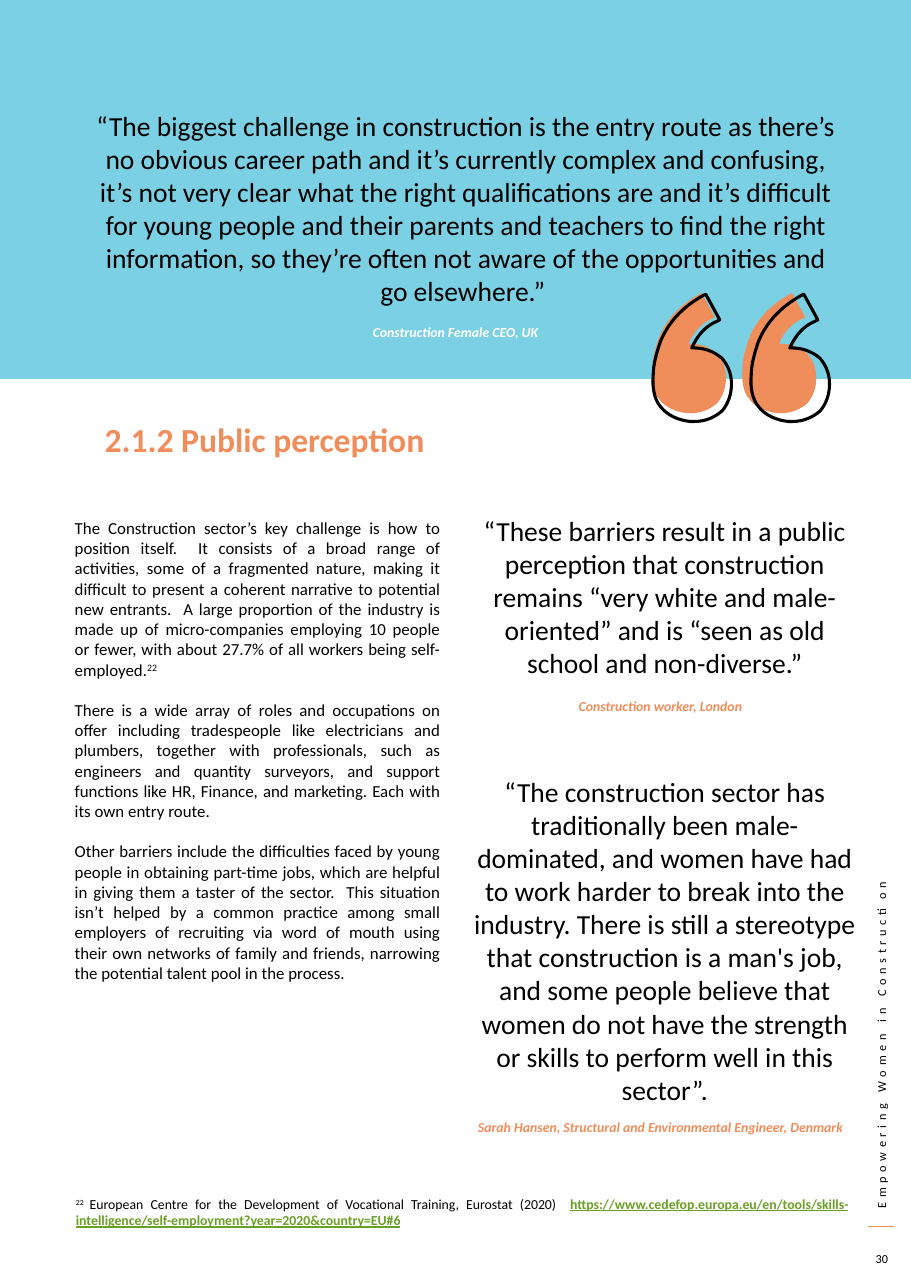
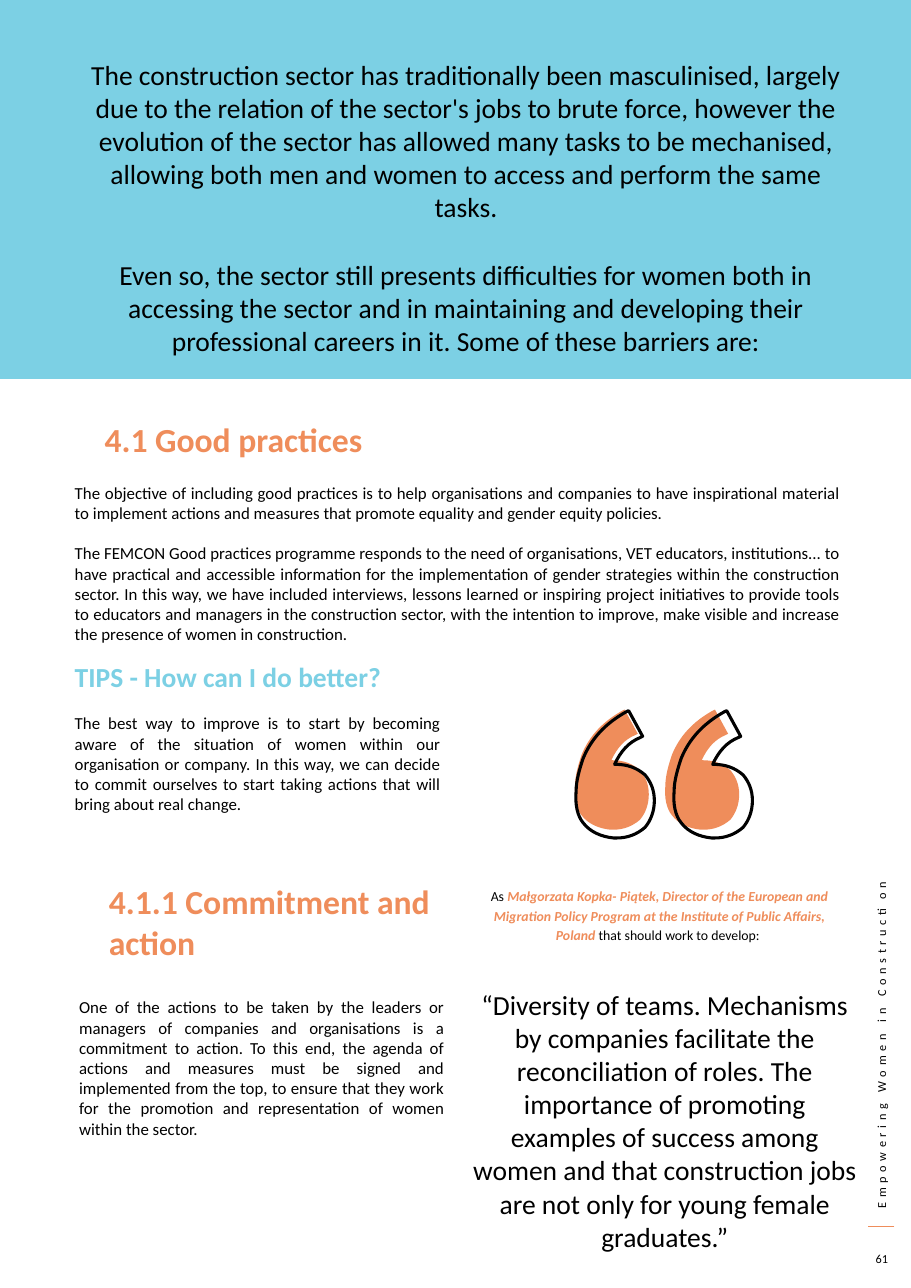
"""Build two report pages on women in construction."""
from dataclasses import dataclass

from lxml import etree
from pptx import Presentation
from pptx import util as u
from pptx.dml.color import RGBColor
from pptx.enum import shapes, text
from pptx.oxml.ns import qn
from pptx.shapes.autoshape import Shape
from pptx.slide import Slide

LEFT = text.PP_ALIGN.LEFT
CENTER = text.PP_ALIGN.CENTER
JUSTIFY = text.PP_ALIGN.JUSTIFY
TOP = text.MSO_ANCHOR.TOP
MIDDLE = text.MSO_ANCHOR.MIDDLE


@dataclass(frozen=True)
class Theme:
    """Colours in RRGGBB, type sizes and gaps in points."""
    font: str = "Calibri"
    ink: str = "000000"
    outline: str = "010101"
    white: str = "FFFFFF"
    orange: str = "EF8D5B"
    sky: str = "7CD0E4"
    link: str = "6B9F25"
    heading: float = 22
    quote: float = 18
    body: float = 11
    small: float = 9
    tiny: float = 8
    body_gap: float = 13.2
    quote_gap: float = 22.7
    column_gap: float = 0.31


T = Theme()


@dataclass(frozen=True)
class Run:
    """A stretch of text in one style."""
    text: str
    size: float = T.body
    color: str = T.ink
    bold: bool = False
    italic: bool = False
    underline: bool = False
    raised: bool = False
    tracking: float = 0


@dataclass(frozen=True)
class Para:
    """A paragraph of runs."""
    runs: tuple[Run, ...]
    align: text.PP_ALIGN = JUSTIFY
    before: float = 0
    spacing: float = 1


@dataclass(frozen=True)
class Box:
    """A text frame with its place in inches."""
    left: float
    top: float
    width: float
    height: float
    paras: tuple[Para, ...]
    anchor: text.MSO_ANCHOR = TOP
    columns: int = 1
    rotation: float = 0


@dataclass(frozen=True)
class Page:
    """A page with its title, number, boxes and quote mark corner."""
    number: int
    title: str
    mark: tuple[float, float]
    boxes: tuple[Box, ...]


def plain(*texts: str) -> tuple[Para, ...]:
    """Return justified body paragraphs."""
    return tuple(Para((Run(t),), before=T.body_gap if i else 0) for i, t in enumerate(texts))


def quote(left: float, top: float, width: float, height: float, *texts: str,
          anchor: text.MSO_ANCHOR = MIDDLE) -> Box:
    """Return a box of large centred paragraphs."""
    paras = tuple(Para((Run(t, T.quote),), CENTER, T.quote_gap if i else 0)
                  for i, t in enumerate(texts))
    return Box(left, top, width, height, paras, anchor)


def speaker(words: str, color: str = T.orange) -> Run:
    """Return the run that names a speaker."""
    return Run(words, T.small, color, bold=True, italic=True)


def credit(left: float, top: float, *runs: Run) -> Box:
    """Return the small centred box under a quote."""
    return Box(left, top, 3.57, 0.43, (Para(runs, CENTER, spacing=1.15),))


def heading(left: float, top: float, width: float, height: float, words: str) -> Box:
    """Return an orange section heading."""
    return Box(left, top, width, height,
               (Para((Run(words, T.heading, T.orange, bold=True),), LEFT),))


def fill_frame(sp: Shape, box: Box) -> None:
    """Write the paragraphs of a box into a shape."""
    tf = sp.text_frame
    tf.word_wrap = True
    tf.auto_size = text.MSO_AUTO_SIZE.NONE
    tf.vertical_anchor = box.anchor
    if box.columns > 1:
        body = tf._txBody.find(qn("a:bodyPr"))
        body.set("numCol", str(box.columns))
        body.set("spcCol", str(u.Inches(T.column_gap)))
    for i, para in enumerate(box.paras):
        p = tf.add_paragraph() if i else tf.paragraphs[0]
        p.alignment = para.align
        p.line_spacing = para.spacing
        p.space_before = u.Pt(para.before)
        for run in para.runs:
            r = p.add_run()
            r.text = run.text
            r.font.name = T.font
            r.font.size = u.Pt(run.size)
            r.font.color.rgb = RGBColor.from_string(run.color)
            r.font.bold = run.bold
            r.font.italic = run.italic
            r.font.underline = run.underline
            if run.raised:
                r._r.get_or_add_rPr().set("baseline", "30000")
            if run.tracking:
                r._r.get_or_add_rPr().set("spc", str(int(run.tracking * 100)))


def add_box(s: Slide, box: Box) -> None:
    """Add a text box."""
    sp = s.shapes.add_textbox(u.Inches(box.left), u.Inches(box.top),
                              u.Inches(box.width), u.Inches(box.height))
    sp.rotation = box.rotation
    fill_frame(sp, box)


def set_title(s: Slide, words: str) -> None:
    """Place and fill the title placeholder."""
    box = heading(0.85, 3.75, 3.57, 0.48, words)
    sp = s.shapes.title
    sp.left, sp.top = u.Inches(box.left), u.Inches(box.top)
    sp.width, sp.height = u.Inches(box.width), u.Inches(box.height)
    fill_frame(sp, box)


Point = tuple[float, float]
COMMA_START: Point = (0.35, 1.09)
COMMA: tuple[tuple[Point, ...], ...] = (
    ((0.34, 1.09), (0.33, 1.09), (0.32, 1.09)),
    ((0.22, 1.08), (0.12, 1.04), (0.06, 0.96)),
    ((0.01, 0.9), (-0.01, 0.8), (0, 0.69)),
    ((0, 0.6), (0.03, 0.5), (0.06, 0.41)),
    ((0.13, 0.24), (0.25, 0.11), (0.43, 0.01)),
    ((0.45, 0),),
    ((0.57, 0.22),),
    ((0.55, 0.23),),
    ((0.45, 0.27), (0.38, 0.35), (0.33, 0.46)),
    ((0.34, 0.46),),
    ((0.44, 0.46), (0.52, 0.49), (0.59, 0.55)),
    ((0.64, 0.61), (0.67, 0.68), (0.67, 0.77)),
    ((0.67, 0.86), (0.64, 0.94), (0.59, 1)),
    ((0.52, 1.06), (0.44, 1.09), COMMA_START),
)


def add_commas(s: Slide, left: float, top: float, pitch: float, scale: float = 1) -> Shape:
    """Add a pair of commas as one freeform with curved sides."""
    def place(point: Point, n: int) -> tuple[int, int]:
        """Return a comma point in slide units."""
        return (u.Inches(left + n * pitch + point[0] * scale), u.Inches(top + point[1] * scale))

    builder = s.shapes.build_freeform(*place(COMMA_START, 0), scale=1.0)
    for n in range(2):
        if n:
            builder.move_to(*place(COMMA_START, n))
        builder.add_line_segments([place(seg[-1], n) for seg in COMMA], close=True)
    sp = builder.convert_to_shape()
    sp.shadow.inherit = False
    segments = [(n, seg) for n in range(2) for seg in COMMA]
    for side, (n, seg) in zip(list(sp._element.iter(qn("a:lnTo"))), segments):
        if len(seg) == 3:
            curve = etree.Element(qn("a:cubicBezTo"))
            for point in seg:
                x, y = place(point, n)
                etree.SubElement(curve, qn("a:pt"), x=str(x - sp.left), y=str(y - sp.top))
            side.getparent().replace(side, curve)
    return sp


def add_quote_mark(s: Slide, left: float, top: float) -> None:
    """Add orange commas under a looser black outline."""
    solid = add_commas(s, left, top, 0.82)
    solid.fill.solid()
    solid.fill.fore_color.rgb = RGBColor.from_string(T.orange)
    solid.line.fill.background()
    outline = add_commas(s, left + 0.01, top + 0.01, 0.89, 1.06)
    outline.fill.background()
    outline.line.color.rgb = RGBColor.from_string(T.outline)
    outline.line.width = u.Pt(2)


def add_frame(s: Slide, number: int) -> None:
    """Add the band, side label, rule and page number."""
    band = s.shapes.add_shape(shapes.MSO_SHAPE.RECTANGLE, 0, 0, u.Inches(8.27), u.Inches(3.44))
    band.shadow.inherit = False
    band.fill.solid()
    band.fill.fore_color.rgb = RGBColor.from_string(T.sky)
    band.line.fill.background()
    label = Run("Empowering Women in Construction", T.tiny, tracking=3)
    add_box(s, Box(6.27, 9.21, 3.47, 0.24, (Para((label,), LEFT),), rotation=270))
    rule = s.shapes.add_connector(shapes.MSO_CONNECTOR.STRAIGHT, u.Inches(8.12),
                                  u.Inches(11.13), u.Inches(7.88), u.Inches(11.13))
    rule.line.color.rgb = RGBColor.from_string(T.orange)
    rule.line.width = u.Pt(1)
    etree.SubElement(rule._element.spPr, qn("a:effectLst"))
    add_box(s, Box(7.81, 11.28, 0.39, 0.29, (Para((Run(str(number), T.tiny),), CENTER),), MIDDLE))


SECTOR = plain(
    "The Construction sector’s key challenge is how to position itself.  It consists of a broad range of activities, some of a fragmented nature, making it difficult to present a coherent narrative to potential new entrants.  A large proportion of the industry is made up of micro-companies employing 10 people or fewer, with about 27.7% of all workers being self-employed.",
    "There is a wide array of roles and occupations on offer including tradespeople like electricians and plumbers, together with professionals, such as engineers and quantity surveyors, and support functions like HR, Finance, and marketing. Each with its own entry route.",
    "Other barriers include the difficulties faced by young people in obtaining part-time jobs, which are helpful in giving them a taster of the sector.  This situation isn’t helped by a common practice among small employers of recruiting via word of mouth using their own networks of family and friends, narrowing the potential talent pool in the process.")

PAGES = (
    Page(30, "2.1.2 Public perception", (5.92, 2.66), (
        quote(0.73, 0.62, 7, 2.53, "“The biggest challenge in construction is the entry route as there’s no obvious career path and it’s currently complex and confusing, it’s not very clear what the right qualifications are and it’s difficult for young people and their parents and teachers to find the right information, so they’re often not aware of the opportunities and go elsewhere.” "),
        credit(2.35, 2.87, speaker("Construction Female CEO, UK", T.white)),
        Box(0.58, 4.65, 7.15, 5.46,
            (Para(SECTOR[0].runs + (Run("22", raised=True),)), *SECTOR[1:]), columns=2),
        quote(4.16, 4.55, 3.75, 1.73, "“These barriers result in a public perception that construction remains “very white and male-oriented” and is “seen as old school and non-diverse.”"),
        credit(4.21, 6.26, speaker("Construction worker, London")),
        quote(4.16, 6.86, 3.75, 3.35, "“The construction sector has traditionally been male-dominated, and women have had to work harder to break into the industry. There is still a stereotype that construction is a man's job, and some people believe that women do not have the strength or skills to perform well in this sector”."),
        credit(4.21, 10.08, speaker("Sarah Hansen, Structural and Environmental Engineer, Denmark")),
        Box(0.59, 10.8, 7.21, 0.89, (Para((
            Run("22 ", T.small, raised=True),
            Run("European Centre for the Development of Vocational Training, Eurostat (2020)  ", T.small),
            Run("https://www.cedefop.europa.eu/en/tools/skills-intelligence/self-employment?year=2020&country=EU#6",
                T.small, T.link, bold=True, underline=True))),)),
    )),
    Page(61, "4.1 Good practices", (5.22, 6.44), (
        quote(0.73, 0.62, 7, 2.53,
              "The construction sector has traditionally been masculinised, largely due to the relation of the sector's jobs to brute force, however the evolution of the sector has allowed many tasks to be mechanised, allowing both men and women to access and perform the same tasks.",
              "Even so, the sector still presents difficulties for women both in accessing the sector and in maintaining and developing their professional careers in it. Some of these barriers are:"),
        Box(0.58, 4.33, 7.15, 1.6, plain(
            "The objective of including good practices is to help organisations and companies to have inspirational material to implement actions and measures that promote equality and gender equity policies.",
            "The FEMCON Good practices programme responds to the need of organisations, VET educators, institutions... to have practical and accessible information for the implementation of gender strategies within the construction sector. In this way, we have included interviews, lessons learned or inspiring project initiatives to provide tools to educators and managers in the construction sector, with the intention to improve, make visible and increase the presence of women in construction.")),
        Box(0.58, 5.94, 7.15, 1.6, (
            Para((Run("TIPS - How can I do better?", T.quote, T.sky, bold=True),)),
            Para((Run("The best way to improve is to start by becoming aware of the situation of women within our organisation or company. In this way, we can decide to commit ourselves to start taking actions that will bring about real change."),),
                 before=T.body_gap)), columns=2),
        heading(0.89, 7.95, 3.25, 0.85, "4.1.1 Commitment and action"),
        Box(0.62, 9, 7.14, 2.53, plain("One of the actions to be taken by the leaders or managers of companies and organisations is a commitment to action. To this end, the agenda of actions and measures must be signed and implemented from the top, to ensure that they work for the promotion and representation of women within the sector."), columns=2),
        credit(4.2, 7.99, Run("As ", T.small),
               speaker("Małgorzata Kopka- Piątek, Director of the European and Migration Policy Program at the Institute of Public Affairs, Poland "),
               Run("that should work to develop: ", T.small)),
        quote(4.16, 8.92, 3.75, 2.5, "“Diversity of teams. Mechanisms by companies facilitate the reconciliation of roles. The importance of promoting examples of success among women and that construction jobs are not only for young female graduates.”", anchor=TOP),
    )),
)


def main() -> None:
    """Build and save the pages."""
    prs = Presentation()
    prs.slide_width, prs.slide_height = u.Inches(8.27), u.Inches(11.69)
    for page in PAGES:
        s = prs.slides.add_slide(prs.slide_layouts[5])
        add_frame(s, page.number)
        set_title(s, page.title)
        add_quote_mark(s, *page.mark)
        for box in page.boxes:
            add_box(s, box)
    prs.save("out.pptx")


if __name__ == "__main__":
    main()
